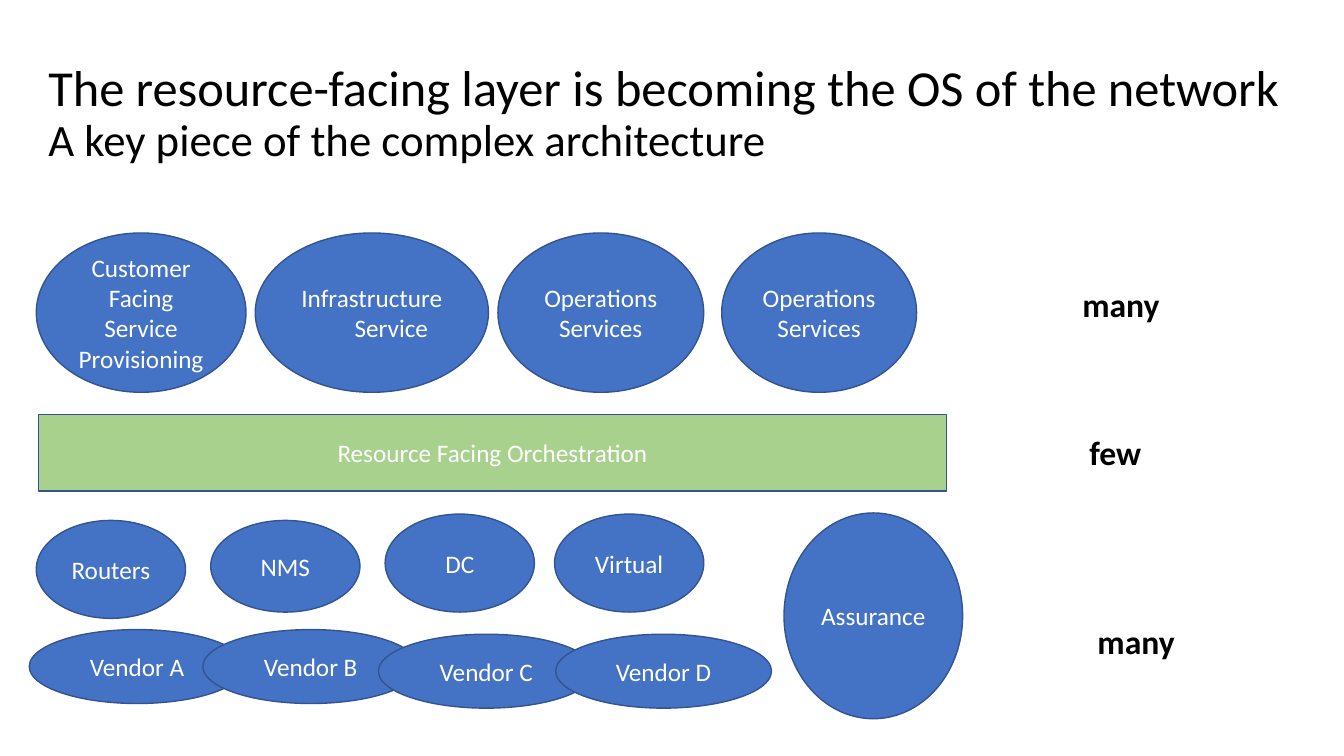
import collections
import dataclasses

import pptx
import pptx.dml.color
import pptx.enum.shapes
import pptx.enum.text
import pptx.util

Box = collections.namedtuple("Box", "left top width height")
Pt = pptx.util.Pt
Kind = pptx.enum.shapes.MSO_SHAPE
Align = pptx.enum.text.PP_ALIGN
Anchor = pptx.enum.text.MSO_ANCHOR
AutoSize = pptx.enum.text.MSO_AUTO_SIZE


@dataclasses.dataclass(frozen=True)
class Theme:
    """Hold the colours, font and type sizes of the slide."""
    font: str = "Calibri"
    blue: str = "4472C4"
    green: str = "A9D18E"
    outline: str = "325491"
    ink: str = "000000"
    white: str = "FFFFFF"
    title_size: int = 36
    subtitle_size: int = 32
    label_size: int = 18
    count_size: int = 24


THEME = Theme()


def rgb(value):
    """Turn a hex string into a colour."""
    return pptx.dml.color.RGBColor.from_string(value)


def format_span(span, size, color, bold=False):
    """Give a run its font, size and colour."""
    span.font.name = THEME.font
    span.font.size = Pt(size)
    span.font.bold = bold
    span.font.color.rgb = rgb(color)


def add_node(page, box, label, kind=Kind.OVAL, fill=THEME.blue):
    """Draw one outlined shape with a centred label."""
    node = page.shapes.add_shape(kind, *map(Pt, box))
    node.shadow.inherit = False
    node.fill.solid()
    node.fill.fore_color.rgb = rgb(fill)
    node.line.color.rgb = rgb(THEME.outline)
    node.line.width = Pt(1)
    frame = node.text_frame
    frame.text = label
    frame.word_wrap = True
    frame.vertical_anchor = Anchor.MIDDLE
    for para in frame.paragraphs:
        para.alignment = Align.CENTER
        for span in para.runs:
            format_span(span, THEME.label_size, THEME.white)
    return node


def add_title(page, box):
    """Write the heading and its second line."""
    frame = page.shapes.add_textbox(*map(Pt, box)).text_frame
    frame.word_wrap = True
    frame.vertical_anchor = Anchor.MIDDLE
    frame.text = ("The resource-facing layer is becoming the OS of the network\v"
                  "A key piece of the complex architecture")
    para = frame.paragraphs[0]
    para.line_spacing = 0.9
    for span, size in zip(para.runs, (THEME.title_size, THEME.subtitle_size)):
        format_span(span, size, THEME.ink)


def add_services(page, box):
    """Draw the row of service ovals."""
    services = [
        ("Customer Facing Service Provisioning", 0, 149.8),
        ("Infrastructure\nService", 156.4, 166.6),
        ("Operations\nServices", 329.8, 147),
        ("Operations\nServices", 489.6, 139.2),
    ]
    nodes = [add_node(page, Box(box.left + shift, box.top, width, box.height), label)
             for label, shift, width in services]
    indented = nodes[1].text_frame.paragraphs[1]
    indented._p.get_or_add_pPr().set("marL", str(Pt(28)))


def add_resources(page, box):
    """Draw the resource ovals above the overlapping vendor ovals."""
    resources = [
        ("Routers", 5, 4.5, 70),
        ("NMS", 129.6, 4.5, 65.5),
        ("DC", 254.2, 0, 70),
        ("Virtual", 375.2, 0, 70),
    ]
    for label, shift, drop, height in resources:
        add_node(page, Box(box.left + shift, box.top + drop, 106.6, height), label)
    vendors = [("A", 0, 82.5), ("B", 124, 82.5), ("C", 249.4, 85.8), ("D", 376, 85.8)]
    for letter, shift, drop in vendors:
        add_node(page, Box(box.left + shift, box.top + drop, 154.2, 52.8),
                 f"Vendor {letter}")


def add_counts(page, box):
    """Write how many systems each layer holds."""
    counts = [
        ("many", 0, 0, 135.4, True),
        ("few", 5, 105.8, 51.8, False),
        ("many", 10.8, 240.5, 70.6, False),
    ]
    for label, shift, drop, width, wrap in counts:
        place = Box(box.left + shift, box.top + drop, width, 36)
        frame = page.shapes.add_textbox(*map(Pt, place)).text_frame
        frame.text = label
        frame.word_wrap = wrap
        frame.auto_size = AutoSize.SHAPE_TO_FIT_TEXT
        format_span(frame.paragraphs[0].runs[0], THEME.count_size, THEME.ink, True)


def main():
    """Build the slide and save the deck."""
    deck = pptx.Presentation()
    deck.slide_width, deck.slide_height = Pt(960), Pt(540)
    page = deck.slides.add_slide(deck.slide_layouts[6])
    add_title(page, Box(27.4, 29.5, 910.8, 104.4))
    add_node(page, Box(27.4, 296, 648.7, 54.7), "Resource Facing Orchestration",
             Kind.RECTANGLE, THEME.green)
    add_resources(page, Box(20.9, 367.2, 530.2, 138.6))
    add_services(page, Box(25.9, 166.4, 628.8, 113.8))
    add_node(page, Box(560, 366.4, 127.6, 147), "Assurance")
    add_counts(page, Box(766, 199.4, 135.4, 276.5))
    deck.save("out.pptx")


if __name__ == "__main__":
    main()
